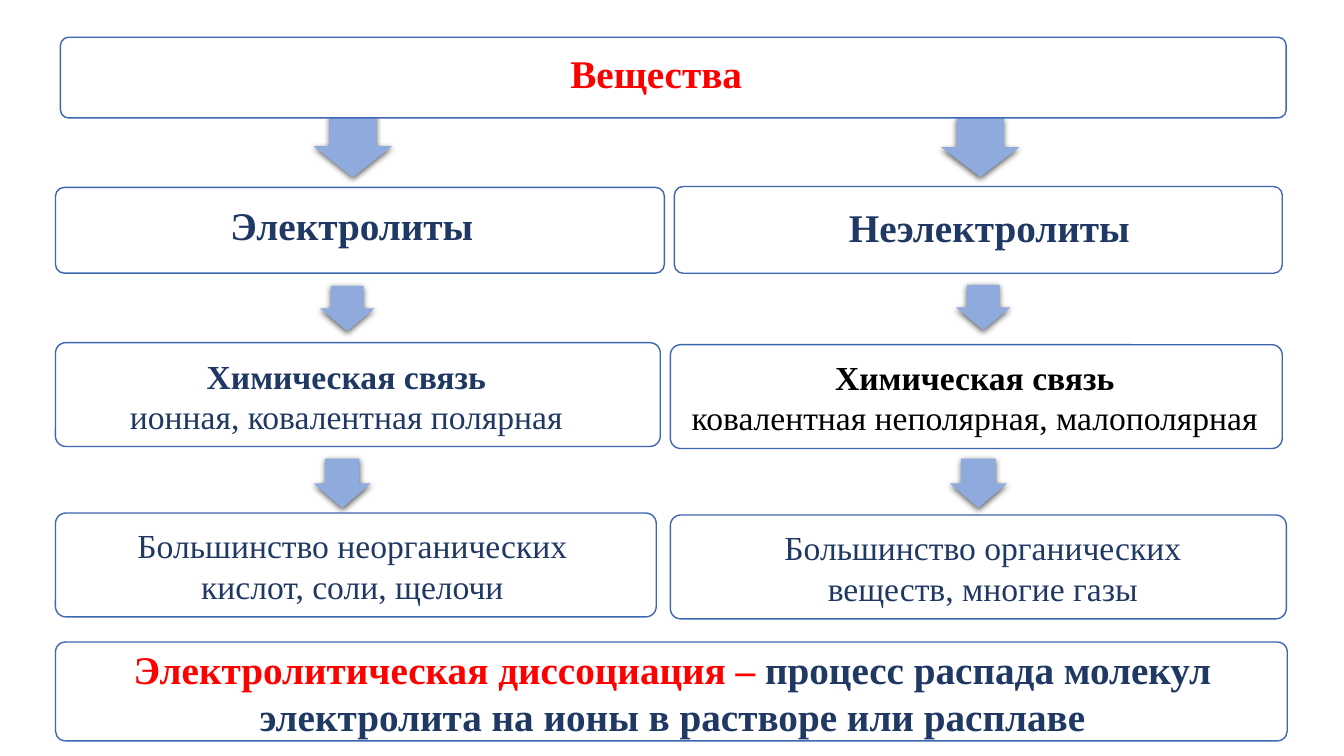
from dataclasses import dataclass

import lxml.etree
import pptx
import pptx.dml.color
import pptx.enum.shapes
import pptx.enum.text
import pptx.oxml.ns
import pptx.util

FONT = "Times New Roman"
RED, NAVY, BLACK = "FF0000", "203864", "000000"
WHITE, OUTLINE, ARROW_BLUE = "FFFFFF", "3E67B2", "8FAADC"

presentation = pptx.Presentation()
presentation.slide_width = pptx.util.Inches(13.333)
presentation.slide_height = pptx.util.Inches(7.5)


@dataclass
class Frame:
    """Left and width in percent of the slide's width, top and height of its height."""
    left: float
    top: float
    width: float
    height: float


@dataclass
class Phrase:
    text: str
    color: str = NAVY
    bold: bool = False


@dataclass
class Card:
    outline: Frame
    label: Frame
    size: int
    paragraphs: list[list[Phrase]]


@dataclass
class DownArrow:
    """Centre, length and breadth in percent of the slide."""
    center_x: float
    center_y: float
    length: float
    breadth: float


def across(percent: float) -> int:
    return round(presentation.slide_width * percent / 100)


def down(percent: float) -> int:
    return round(presentation.slide_height * percent / 100)


def place(frame: Frame) -> tuple[int, int, int, int]:
    return across(frame.left), down(frame.top), across(frame.width), down(frame.height)


def rgb(color: str) -> pptx.dml.color.RGBColor:
    return pptx.dml.color.RGBColor.from_string(color)


def add_soft_shadow(arrow) -> None:
    qn = pptx.oxml.ns.qn
    arrow.shadow.inherit = False
    effects = arrow._element.spPr.find(qn("a:effectLst"))
    shadow = lxml.etree.SubElement(
        effects, qn("a:outerShdw"), blurRad=str(pptx.util.Pt(4.5)),
        dist=str(pptx.util.Pt(1.5)), dir="5400000", algn="ctr", rotWithShape="0")
    shade = lxml.etree.SubElement(shadow, qn("a:srgbClr"), val=BLACK)
    lxml.etree.SubElement(shade, qn("a:alpha"), val="63000")


def draw_arrow(slide, spec_arrow: DownArrow) -> None:
    length, breadth = down(spec_arrow.length), across(spec_arrow.breadth)
    arrow = slide.shapes.add_shape(
        pptx.enum.shapes.MSO_SHAPE.RIGHT_ARROW,
        across(spec_arrow.center_x) - length // 2,
        down(spec_arrow.center_y) - breadth // 2, length, breadth)
    arrow.rotation = 90
    arrow.adjustments[0], arrow.adjustments[1] = 0.6, 0.5
    arrow.fill.solid()
    arrow.fill.fore_color.rgb = rgb(ARROW_BLUE)
    arrow.line.fill.background()
    add_soft_shadow(arrow)


def draw_outline(slide, frame: Frame) -> None:
    outline = slide.shapes.add_shape(
        pptx.enum.shapes.MSO_SHAPE.ROUNDED_RECTANGLE, *place(frame))
    outline.adjustments[0] = 0.1
    outline.shadow.inherit = False
    outline.fill.solid()
    outline.fill.fore_color.rgb = rgb(WHITE)
    outline.line.color.rgb = rgb(OUTLINE)
    outline.line.width = pptx.util.Pt(1)


def write(label, card: Card, wrap: bool = True) -> None:
    text_frame = label.text_frame
    text_frame.word_wrap = wrap
    text_frame.auto_size = pptx.enum.text.MSO_AUTO_SIZE.SHAPE_TO_FIT_TEXT
    text_frame.vertical_anchor = pptx.enum.text.MSO_ANCHOR.TOP
    text_frame.text = "\n".join(phrases[0].text for phrases in card.paragraphs)
    for paragraph, phrases in zip(text_frame.paragraphs, card.paragraphs):
        paragraph.alignment = pptx.enum.text.PP_ALIGN.CENTER
        paragraph.line_spacing = 1.0
        for phrase in phrases[1:]:
            paragraph.add_run().text = phrase.text
        for run, phrase in zip(paragraph.runs, phrases):
            run.font.name = FONT
            run.font.size = pptx.util.Pt(card.size)
            run.font.bold = phrase.bold
            run.font.color.rgb = rgb(phrase.color)


def draw_card(slide, card: Card) -> None:
    draw_outline(slide, card.outline)
    write(slide.shapes.add_textbox(*place(card.label)), card)


def draw_title(slide, card: Card) -> None:
    draw_outline(slide, card.outline)
    title = slide.shapes.title
    title.left, title.top, title.width, title.height = place(card.label)
    write(title, card, wrap=False)
    # The title lies above its filled outline
    slide.shapes._spTree.append(title._element)


SUBSTANCES = Card(Frame(4.5, 4.93, 91.2, 10.67), Frame(41.63, 5.87, 14.4, 7.6), 28,
                  [[Phrase("Вещества", RED, True)]])

CARDS = [
    # Kinds of substances
    Card(Frame(4.13, 24.8, 45.3, 11.33), Frame(14.18, 26, 24, 7.6), 28,
         [[Phrase("Электролиты", bold=True)]]),
    Card(Frame(50.18, 24.67, 45.23, 11.47), Frame(58.2, 26.27, 30.83, 7.6), 28,
         [[Phrase("Неэлектролиты", bold=True)]]),
    # Chemical bond
    Card(Frame(4.13, 45.33, 45, 13.73), Frame(7.43, 46.4, 36.68, 12.13), 24,
         [[Phrase("Химическая связь", bold=True)],
          [Phrase("ионная, ковалентная полярная")]]),
    Card(Frame(49.88, 45.6, 45.53, 13.73), Frame(49.65, 46.53, 45.75, 12.13), 24,
         [[Phrase("Химическая связь", BLACK, True)],
          [Phrase("ковалентная неполярная, малополярная", BLACK)]]),
    # Examples
    Card(Frame(4.13, 67.87, 44.7, 13.73), Frame(7.28, 68.8, 37.88, 12.13), 24,
         [[Phrase("Большинство неорганических кислот, соли, щелочи")]]),
    Card(Frame(49.88, 68.13, 45.83, 13.73), Frame(56.03, 69.07, 34.2, 12.13), 24,
         [[Phrase("Большинство органических веществ, многие газы")]]),
    # Definition
    Card(Frame(4.13, 84.93, 91.65, 13.07), Frame(4.65, 84.67, 90.75, 13.87), 28,
         [[Phrase("Электролитическая диссоциация – ", RED, True),
           Phrase("процесс распада молекул электролита на ионы в растворе или расплаве",
                  bold=True)]]),
]

ARROWS = [
    DownArrow(26.25, 19.33, 8.27, 5.85),
    DownArrow(72.94, 19.47, 7.87, 5.85),
    DownArrow(25.84, 40.8, 6, 4.05),
    DownArrow(73.16, 40.67, 6, 4.05),
    DownArrow(25.46, 63.93, 6.53, 4.28),
    DownArrow(72.79, 63.93, 6.53, 4.28),
]


def main() -> None:
    slide = presentation.slides.add_slide(presentation.slide_layouts[5])
    for arrow in ARROWS:
        draw_arrow(slide, arrow)
    for card in CARDS:
        draw_card(slide, card)
    draw_title(slide, SUBSTANCES)
    presentation.save("out.pptx")


if __name__ == "__main__":
    main()
